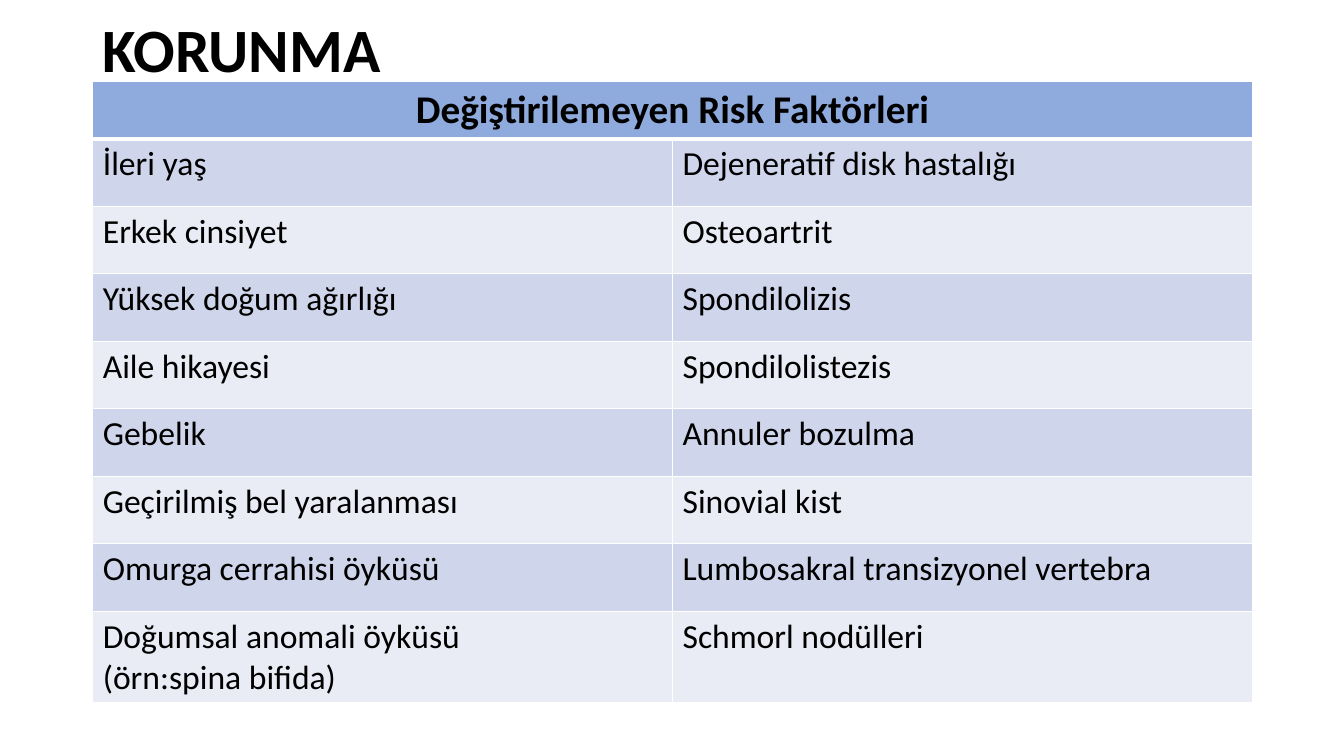
from pptx import Presentation
from pptx.dml.color import RGBColor
from pptx.enum import text
from pptx.oxml import parse_xml
from pptx.oxml.ns import nsdecls
from pptx.util import Inches, Pt

# Content
TITLE = "KORUNMA"
HEAD = "Değiştirilemeyen Risk Faktörleri"
ROWS = [
    ("İleri yaş", "Dejeneratif disk hastalığı"),
    ("Erkek cinsiyet", "Osteoartrit"),
    ("Yüksek doğum ağırlığı", "Spondilolizis"),
    ("Aile hikayesi", "Spondilolistezis"),
    ("Gebelik", "Annuler bozulma"),
    ("Geçirilmiş bel yaralanması", "Sinovial kist"),
    ("Omurga cerrahisi öyküsü", "Lumbosakral transizyonel vertebra"),
    ("Doğumsal anomali öyküsü\n(örn:spina bifida)", "Schmorl nodülleri"),
]

THEME = {
    "font": "Calibri", "ink": "000000", "line": "FFFFFF",
    "head": "8FAADC", "bands": ("CFD5EA", "E9EBF5"),
    "title_size": 44, "head_size": 28, "body_size": 24,
}

# Layout in inches
LEFT, TOP, WIDTH = 0.92, 0.81, 11.5
HEAD_H, ROW_H, LAST_H = 0.52, 0.67, 0.87


def style(frame, size, bold=False, align=text.PP_ALIGN.LEFT):
    for para in frame.paragraphs:
        para.alignment = align
        font = para.font
        font.name, font.size, font.bold = THEME["font"], Pt(size), bold
        font.color.rgb = RGBColor.from_string(THEME["ink"])


def paint(cell, fill, base=1):
    props = cell._tc.get_or_add_tcPr()
    for side, width in (("L", 1), ("R", 1), ("T", 1), ("B", base)):
        props.append(parse_xml(
            f'<a:ln{side} {nsdecls("a")} w="{Pt(width)}"><a:solidFill>'
            f'<a:srgbClr val="{THEME["line"]}"/></a:solidFill></a:ln{side}>'))
    cell.fill.solid()
    cell.fill.fore_color.rgb = RGBColor.from_string(fill)


def main():
    deck = Presentation()
    deck.slide_width, deck.slide_height = Inches(13.33), Inches(7.5)
    slide = deck.slides.add_slide(deck.slide_layouts[6])

    # Title
    box = slide.shapes.add_textbox(
        Inches(LEFT), Inches(0.07), Inches(5.08), Inches(0.91))
    frame = box.text_frame
    frame.word_wrap = True
    frame.vertical_anchor = text.MSO_ANCHOR.MIDDLE
    frame.text = TITLE
    frame.paragraphs[0].line_spacing = 0.9
    style(frame, THEME["title_size"], bold=True)

    # Table grid
    sizes = [HEAD_H] + [ROW_H] * (len(ROWS) - 1) + [LAST_H]
    table = slide.shapes.add_table(
        len(sizes), 2, Inches(LEFT), Inches(TOP),
        Inches(WIDTH), Inches(sum(sizes))).table
    for row, size in zip(table.rows, sizes):
        row.height = Inches(size)

    # Header across both columns
    head = table.cell(0, 0)
    head.merge(table.cell(0, 1))
    head.text = HEAD
    style(head.text_frame, THEME["head_size"], True, text.PP_ALIGN.CENTER)
    for col in range(2):
        paint(table.cell(0, col), THEME["head"], base=3)

    # Banded body
    for r, row in enumerate(ROWS):
        for c, words in enumerate(row):
            cell = table.cell(r + 1, c)
            cell.text = words
            style(cell.text_frame, THEME["body_size"])
            paint(cell, THEME["bands"][r % 2])

    deck.save("out.pptx")


if __name__ == "__main__":
    main()
